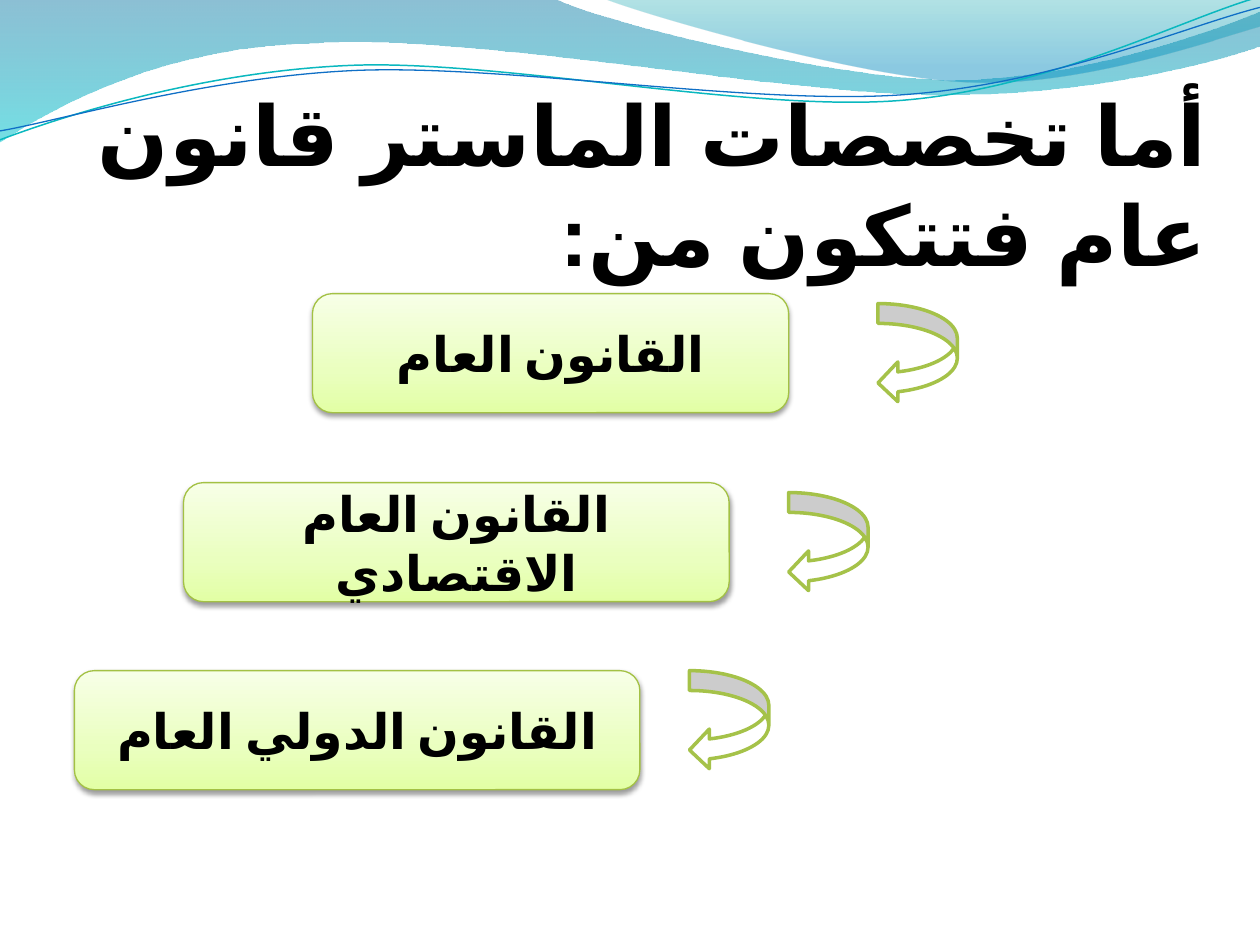
"""Build the slide on public law master tracks."""
from lxml import etree
from pptx import Presentation
from pptx.dml.color import RGBColor
from pptx.enum.shapes import MSO_SHAPE
from pptx.enum.text import MSO_ANCHOR, MSO_AUTO_SIZE, PP_ALIGN
from pptx.oxml.ns import qn
from pptx.util import Cm, Pt

ROUND = MSO_SHAPE.ROUNDED_RECTANGLE
ARROW = MSO_SHAPE.CURVED_LEFT_ARROW
MIDDLE, BOTTOM = MSO_ANCHOR.MIDDLE, MSO_ANCHOR.BOTTOM
CENTER, RIGHT = PP_ALIGN.CENTER, PP_ALIGN.RIGHT
FIXED = MSO_AUTO_SIZE.NONE

BLACK = RGBColor(0x00, 0x00, 0x00)
WHITE = RGBColor(0xFF, 0xFF, 0xFF)
GREEN = RGBColor(0xA5, 0xC2, 0x49)
EDGE = RGBColor(0xA3, 0xC1, 0x44)
LIME = RGBColor(0xE2, 0xFF, 0xA5)
PALE = RGBColor(0xEA, 0xFF, 0xBF)
MIST = RGBColor(0xF7, 0xFF, 0xE7)
DEEP = RGBColor(0x00, 0x74, 0xA1)
AQUA = RGBColor(0x00, 0xC6, 0xCF)
TEAL = RGBColor(0x00, 0xA1, 0xA9)
SKY = RGBColor(0x00, 0x8B, 0xBF)
CYAN = RGBColor(0x0A, 0xB8, 0xBF)
BLUE = RGBColor(0x0F, 0x6F, 0xC6)

LANG = "ar-DZ"
TITLE = "أما تخصصات الماستر قانون عام فتتكون من:"
TITLE_BOX = dict(left=Cm(1.27), top=Cm(1.96), width=Cm(23.06), height=Cm(3.76))
TITLE_FRAME = dict(word_wrap=True, auto_size=FIXED, vertical_anchor=BOTTOM,
                   margin_left=0, margin_right=0, margin_top=Cm(0.13),
                   margin_bottom=0)
TITLE_FONT = dict(name="Arial", size=Pt(47.7), bold=True)
TRACK_FRAME = dict(word_wrap=True, auto_size=FIXED, vertical_anchor=MIDDLE,
                   margin_left=Cm(0.13), margin_right=Cm(0.13), margin_top=0,
                   margin_bottom=0)
TRACK_FONT = dict(name="Calibri", size=Pt(28), bold=True)

TRACKS = [
    ("القانون العام", 6.3, 5.92, 9.6, 17.7, 6.12),
    ("القانون العام الاقتصادي", 3.7, 9.73, 11, 15.9, 9.93),
    ("القانون الدولي العام", 1.5, 13.52, 11.4, 13.9, 13.52),
]
BANDS = [
    ([(0, 0), (11.18, -0.03), (12.09, 0.43, 16.87, 1.6, 19.25, 1.6),
      (21.67, 1.6, 24.33, 0.66, 25.4, 0.23), (25.43, 0.91),
      (24.97, 1.12, 22.1, 1.93, 18.95, 1.91),
      (15.8, 1.91, 9.7, 0.71, 6.53, 0.86),
      (3.28, 0.91, 1.17, 2.11, -0.03, 2.87)],
     [(0, DEEP, 45), (100, AQUA, 55)]),
    ([(12.17, -0.03), (12.93, 0.28, 17.32, 1.57, 19.53, 1.65),
      (21.74, 1.75, 24.41, 0.81, 25.4, 0.53), (25.4, 0)],
     [(0, TEAL, 30), (80, SKY, 45)]),
]
WAVES = [
    ([(0, 2.82), (1.22, 2.36, 4.01, 1.45, 7.04, 1.32),
      (10.03, 1.19, 15.06, 2.26, 18.11, 2.03),
      (21.16, 1.8, 23.83, 0.38, 25.35, -0.05)], CYAN, 0.85),
    ([(0, 2.64), (1.19, 2.44, 4.17, 1.55, 7.19, 1.42),
      (10.24, 1.3, 15.16, 2.13, 18.21, 1.91),
      (21.23, 1.7, 23.9, 0.53, 25.4, 0.15)], BLUE, 0.75),
]


def apply(item, look):
    """Set each named value on an object."""
    for key, value in look.items():
        setattr(item, key, value)


def bend(shape, parts):
    """Turn the segments that have control points into cubic curves."""
    lines = list(shape.element.spPr.iter(qn("a:lnTo")))
    for line, part in zip(lines, parts):
        if len(part) == 2:
            continue
        curve = etree.Element(qn("a:cubicBezTo"))
        for x, y in zip(part[::2], part[1::2]):
            etree.SubElement(curve, qn("a:pt"), x=str(Cm(x) - shape.left),
                             y=str(Cm(y) - shape.top))
        line.getparent().replace(line, curve)


def draw_path(slide, path, close):
    """Add an outline that follows a path."""
    dots = [(Cm(part[-2]), Cm(part[-1])) for part in path]
    pen = slide.shapes.build_freeform(*dots[0])
    pen.add_line_segments(dots[1:], close=close)
    shape = pen.convert_to_shape()
    shape.shadow.inherit = False
    bend(shape, path[1:])
    return shape


def blend(shape, stops, angle):
    """Fill a shape with a gradient of place, colour and opacity stops."""
    shape.fill.gradient()
    shape.fill.gradient_angle = angle
    group = shape.element.spPr.find(".//" + qn("a:gsLst"))
    for old in list(group):
        group.remove(old)
    for place, color, alpha in stops:
        stop = etree.SubElement(group, qn("a:gs"), pos=str(place * 1000))
        tint = etree.SubElement(stop, qn("a:srgbClr"), val=str(color))
        if alpha < 100:
            etree.SubElement(tint, qn("a:alpha"), val=str(alpha * 1000))


def rule(shape, color, width):
    """Set the line of a shape."""
    shape.line.color.rgb = color
    shape.line.width = Pt(width)


def cast(shape):
    """Give a shape a soft shadow below it."""
    group = shape.element.spPr.find(qn("a:effectLst"))
    shade = etree.SubElement(group, qn("a:outerShdw"), blurRad=str(Pt(3.1)),
                             dist=str(Pt(1.6)), dir="5400000", rotWithShape="0")
    tint = etree.SubElement(shade, qn("a:srgbClr"), val=str(BLACK))
    etree.SubElement(tint, qn("a:alpha"), val="38000")


def write(shape, text, frame, font, align):
    """Write one right-to-left paragraph in a shape."""
    apply(shape.text_frame, frame)
    para = shape.text_frame.paragraphs[0]
    para.alignment = align
    para._p.get_or_add_pPr().set("rtl", "1")
    run = para.add_run()
    run.text = text
    apply(run.font, font)
    run.font.color.rgb = BLACK
    props = run._r.get_or_add_rPr()
    props.set("lang", LANG)
    etree.SubElement(props, qn("a:cs"), typeface=font["name"])
    return para


def add_shape(slide, kind, left, top, width, height):
    """Add a preset shape without the theme shadow."""
    shape = slide.shapes.add_shape(kind, Cm(left), Cm(top), Cm(width), Cm(height))
    shape.shadow.inherit = False
    return shape


def add_arrow(slide, left, top):
    """Add a curved arrow."""
    arrow = add_shape(slide, ARROW, left, top, 1.6, 2)
    arrow.fill.solid()
    arrow.fill.fore_color.rgb = WHITE
    rule(arrow, GREEN, 2)


def add_track(slide, text, left, top, width):
    """Add a box that names a track."""
    box = add_shape(slide, ROUND, left, top, width, 2.4)
    blend(box, [(0, LIME, 100), (35, PALE, 100), (100, MIST, 100)], 90)
    rule(box, EDGE, 0.75)
    cast(box)
    para = write(box, text, TRACK_FRAME, TRACK_FONT, CENTER)
    para.space_before = Pt(5.6)


def main():
    """Build and save the slide."""
    deck = Presentation()
    apply(deck, dict(slide_width=Cm(25.4), slide_height=Cm(19.05)))
    slide = deck.slides.add_slide(deck.slide_layouts[5])
    for path, stops in BANDS:
        band = draw_path(slide, path, True)
        blend(band, stops, 270)
        band.line.fill.background()
    for path, color, width in WAVES:
        wave = draw_path(slide, path, False)
        wave.fill.background()
        rule(wave, color, width)
    title = slide.shapes.title
    slide.shapes.element.append(title.element)
    apply(title, TITLE_BOX)
    write(title, TITLE, TITLE_FRAME, TITLE_FONT, RIGHT)
    for text, left, top, width, tip, peak in TRACKS:
        add_arrow(slide, tip, peak)
        add_track(slide, text, left, top, width)
    deck.save("out.pptx")


if __name__ == "__main__":
    main()
